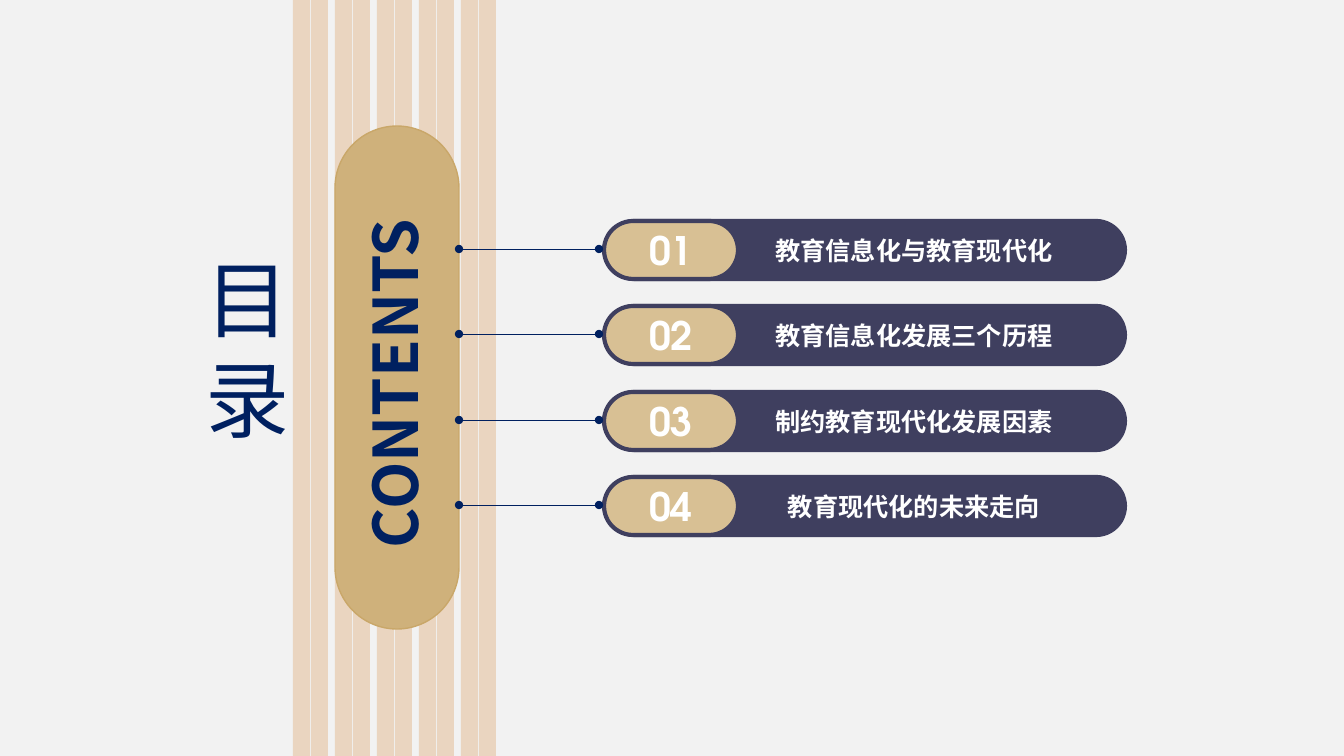
from lxml.etree import SubElement
from pptx import Presentation
from pptx.dml.color import RGBColor
from pptx.enum.shapes import MSO_CONNECTOR, MSO_SHAPE
from pptx.enum.text import MSO_ANCHOR, MSO_AUTO_SIZE, PP_ALIGN
from pptx.oxml.ns import qn
from pptx.util import Pt

SCALE = 914400 / 100.8
SANS = "Noto Sans CJK SC"
GEOMETRIC = "TeX Gyre Adventor"
BACKGROUND, STRIPE, WHITE = "F2F2F2", "EAD5C0", "FFFFFF"
NAVY, INDIGO = "002060", "3F3F5F"
GOLD, GOLD_EDGE, PALE_GOLD = "CFB17B", "C9A769", "D8C094"
TOPICS = [
    "教育信息化与教育现代化",
    "教育信息化发展三个历程",
    "制约教育现代化发展因素",
    "教育现代化的未来走向",
]


def px(*lengths):
    """Turn pixel lengths into a list of EMU lengths."""
    return [round(length * SCALE) for length in lengths]


def color(code):
    """Turn a hex string into a colour."""
    return RGBColor.from_string(code)


def write(frame, text, size, code, family=SANS, bold=False, align=PP_ALIGN.LEFT):
    """Put one formatted paragraph into a text frame."""
    frame.text = text
    para = frame.paragraphs[0]
    para.alignment = align
    para.line_spacing = 1.0
    font = para.font
    font.size, font.bold, font.name = Pt(size), bold, family
    font.color.rgb = color(code)
    properties = para._p.pPr.find(qn("a:defRPr"))
    SubElement(properties, qn("a:ea"), typeface=family)


def fit_frame(frame, direction="horz"):
    """Let a frame grow with its unwrapped text and set its direction."""
    frame.word_wrap = False
    frame.auto_size = MSO_AUTO_SIZE.SHAPE_TO_FIT_TEXT
    frame.vertical_anchor = MSO_ANCHOR.TOP
    frame._txBody.bodyPr.set("vert", direction)


def add_block(slide, kind, place, fill, edge=None, width=1):
    """Add a filled shape with an optional outline."""
    block = slide.shapes.add_shape(kind, *px(*place))
    block.shadow.inherit = False
    block.fill.solid()
    block.fill.fore_color.rgb = color(fill)
    if edge:
        block.line.color.rgb = color(edge)
        block.line.width = Pt(width)
    else:
        block.line.fill.background()
    return block


def add_pill(slide, place, fill, edge, width):
    """Add a rectangle with fully rounded ends."""
    pill = add_block(slide, MSO_SHAPE.ROUNDED_RECTANGLE, place, fill, edge, width)
    pill.adjustments[0] = 0.5
    return pill


def add_label(slide, place, text, size, code, direction="horz", align=PP_ALIGN.LEFT):
    """Add a bold text box."""
    box = slide.shapes.add_textbox(*px(*place))
    write(box.text_frame, text, size, code, bold=True, align=align)
    fit_frame(box.text_frame, direction)


def add_link(slide, left, right, level):
    """Add a thin horizontal line with a dot at each end."""
    link = slide.shapes.add_connector(
        MSO_CONNECTOR.STRAIGHT, *px(left, level, right, level))
    link.line.color.rgb = color(NAVY)
    link.line.width = Pt(0.5)
    outline = link.line._get_or_add_ln()
    for end in ("a:headEnd", "a:tailEnd"):
        SubElement(outline, qn(end), type="oval")
    SubElement(link._element.spPr, qn("a:effectLst"))


def add_stripes(slide):
    """Add five pairs of full-height stripes."""
    for pair in range(5):
        for half in range(2):
            left = 293 + 42 * pair + 18 * half
            add_block(slide, MSO_SHAPE.RECTANGLE, (left, 0, 17, 756), STRIPE)


def add_topic(slide, index, topic):
    """Add one numbered row of the contents list."""
    top = 221 + 171 * index // 2
    add_pill(slide, (606, top, 519, 58), INDIGO, INDIGO, 3)
    add_label(slide, (764, top + 9, 300, 40), topic, 18, WHITE, align=PP_ALIGN.CENTER)
    badge = add_pill(slide, (604, top, 134, 58), PALE_GOLD, INDIGO, 3)
    badge.text_frame.vertical_anchor = MSO_ANCHOR.MIDDLE
    write(badge.text_frame, f"{index + 1:02}", 28, WHITE, GEOMETRIC, True, PP_ALIGN.CENTER)
    add_link(slide, 459, 599, top + 28)


def place_title(slide):
    """Set the stacked vertical title."""
    title = slide.shapes.title
    title.left, title.top, title.width, title.height = px(195, 242, 151, 271)
    write(title.text_frame, "目录", 60, NAVY)
    fit_frame(title.text_frame, "wordArtVertRtl")


def main():
    """Build and save the contents slide."""
    deck = Presentation()
    deck.slide_width, deck.slide_height = px(1344, 756)
    slide = deck.slides.add_slide(deck.slide_layouts[5])
    slide.background.fill.solid()
    slide.background.fill.fore_color.rgb = color(BACKGROUND)
    add_stripes(slide)
    add_pill(slide, (335, 126, 124, 503), GOLD, GOLD_EDGE, 1)
    add_label(slide, (352, 199, 95, 359), "CONTENTS", 44, NAVY, "vert270")
    place_title(slide)
    for index, topic in enumerate(TOPICS):
        add_topic(slide, index, topic)
    deck.save("out.pptx")


if __name__ == "__main__":
    main()
